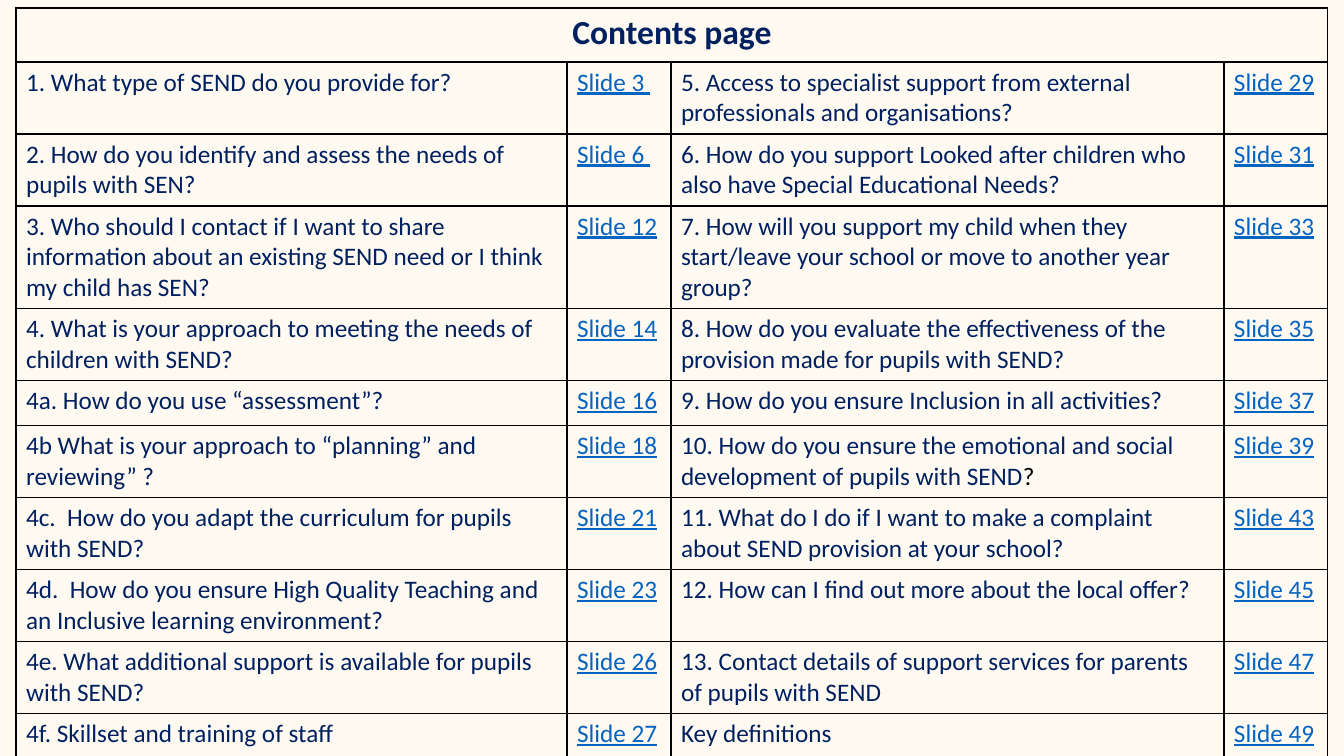
from lxml.etree import SubElement
from pptx import Presentation
from pptx.dml.color import RGBColor
from pptx.enum.text import PP_ALIGN
from pptx.oxml.ns import qn
from pptx.util import Pt

PX = 914400 / 100.8
FONT = "Calibri"
NAVY, LINK, BLACK, CREAM = "002060", "0563C1", "000000", "FFFAF1"
TITLE_HEIGHT = 54
LINE_HEIGHTS = {1: 45, 2: 72, 3: 102}
COLUMN_WIDTHS = [551, 104, 553, 104]

CONTENTS = [
    (2, "1. What type of SEND do you provide for?", "Slide 3 ",
     "5. Access to specialist support from external professionals and organisations?", "Slide 29"),
    (2, "2. How do you identify and assess the needs of pupils with SEN?", "Slide 6 ",
     "6. How do you support Looked after children who also have Special Educational Needs?", "Slide 31"),
    (3, "3. Who should I contact if I want to share information about an existing SEND need "
        "or I think my child has SEN?", "Slide 12",
     "7. How will you support my child when they start/leave your school or move to another "
     "year group?", "Slide 33"),
    (2, "4. What is your approach to meeting the needs of children with SEND?", "Slide 14",
     "8. How do you evaluate the effectiveness of the provision made for pupils with SEND?", "Slide 35"),
    (1, "4a. How do you use “assessment”?", "Slide 16",
     "9. How do you ensure Inclusion in all activities?", "Slide 37"),
    (2, "4b What is your approach to “planning” and reviewing” ?", "Slide 18",
     "10. How do you ensure the emotional and social development of pupils with SEND", "Slide 39"),
    (2, "4c.  How do you adapt the curriculum for pupils with SEND?", "Slide 21",
     "11. What do I do if I want to make a complaint about SEND provision at your school?", "Slide 43"),
    (2, "4d.  How do you ensure High Quality Teaching and an Inclusive learning environment?", "Slide 23",
     "12. How can I find out more about the local offer?", "Slide 45"),
    (2, "4e. What additional support is available for pupils with SEND?", "Slide 26",
     "13. Contact details of support services for parents of pupils with SEND", "Slide 47"),
    (1, "4f. Skillset and training of staff", "Slide 27", "Key definitions", "Slide 49"),
]


def px(length):
    """Turn pixels into EMU."""
    return round(length * PX)


def color(value):
    """Turn a hex string into a colour."""
    return RGBColor.from_string(value)


def format_run(run, size, hex_color, bold=False, underline=False):
    """Set the font of one run."""
    font = run.font
    font.name, font.size, font.bold, font.underline = FONT, Pt(size), bold, underline
    font.color.rgb = color(hex_color)


def set_borders(cell):
    """Draw a thin black line on all four sides of a cell."""
    properties = cell._tc.get_or_add_tcPr()
    for side in ("a:lnL", "a:lnR", "a:lnT", "a:lnB"):
        line = SubElement(properties, qn(side), w=str(Pt(1)))
        fill = SubElement(line, qn("a:solidFill"))
        SubElement(fill, qn("a:srgbClr"), val=BLACK)


def add_contents_table(slide, left, top):
    """Add the contents table with its merged heading row."""
    heights = [TITLE_HEIGHT] + [LINE_HEIGHTS[lines] for lines, *_ in CONTENTS]
    table = slide.shapes.add_table(
        len(heights), len(COLUMN_WIDTHS), px(left), px(top),
        px(sum(COLUMN_WIDTHS)), px(sum(heights))).table
    table.first_row = table.horz_banding = False
    for column, width in zip(table.columns, COLUMN_WIDTHS):
        column.width = px(width)
    for row, height in zip(table.rows, heights):
        row.height = px(height)
    for cell in table.iter_cells():
        set_borders(cell)
        cell.fill.background()

    heading = table.cell(0, 0)
    heading.merge(table.cell(0, len(COLUMN_WIDTHS) - 1))
    heading.text_frame.text = "Contents page"
    paragraph = heading.text_frame.paragraphs[0]
    paragraph.alignment = PP_ALIGN.CENTER
    format_run(paragraph.runs[0], 24, NAVY, bold=True)

    for row_index, (_, *texts) in enumerate(CONTENTS, start=1):
        for column_index, text in enumerate(texts):
            paragraph = table.cell(row_index, column_index).text_frame.paragraphs[0]
            paragraph.text = text
            is_link = column_index % 2 == 1
            format_run(paragraph.runs[0], 18, LINK if is_link else NAVY, underline=is_link)
            if text.startswith("10."):
                question_mark = paragraph.add_run()
                question_mark.text = "?"
                format_run(question_mark, 18, BLACK)


def main():
    """Build the contents slide and save it."""
    presentation = Presentation()
    presentation.slide_width, presentation.slide_height = px(1344), px(756)
    slide = presentation.slides.add_slide(presentation.slide_layouts[6])
    slide.background.fill.solid()
    slide.background.fill.fore_color.rgb = color(CREAM)
    add_contents_table(slide, 16, 8)
    presentation.save("out.pptx")


if __name__ == "__main__":
    main()
